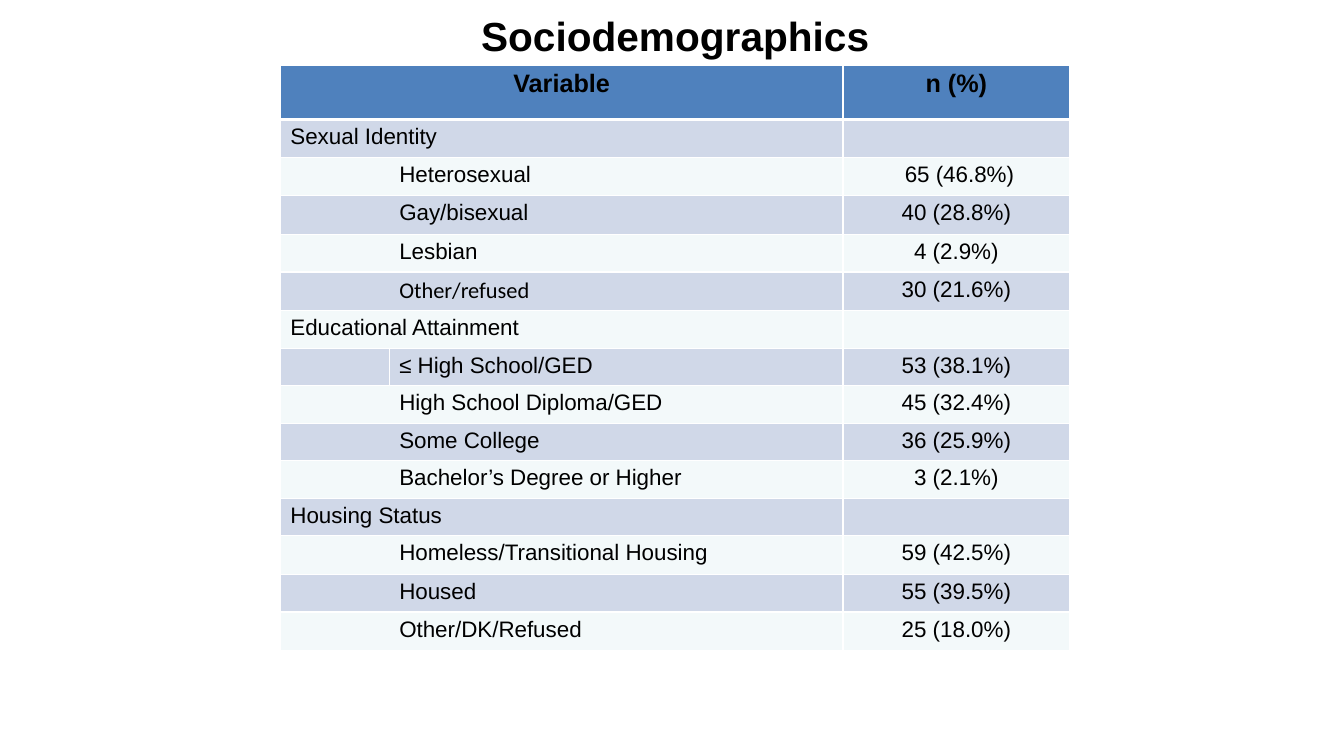
from dataclasses import dataclass

from pptx import Presentation
from pptx.dml.color import RGBColor
from pptx.enum.text import MSO_ANCHOR as Anchor, MSO_AUTO_SIZE as Fit, PP_ALIGN as Align
from pptx.oxml.xmlchemy import OxmlElement as Node
from pptx.table import Table, _Cell as Cell
from pptx.text.text import _Paragraph as Para
from pptx.util import Emu, Inches, Pt

WIDE, HIGH = Inches(13.33), Inches(7.5)
BLACK, WHITE, BLUE = "000000", "FFFFFF", "4F81BD"
BANDS = ("D0D8E8", "F3F9FA")
COLS = (8.1, 33.76, 16.88)


@dataclass
class Row:
    label: str
    value: str = ""
    high: float = 4.53
    font: str = "Arial"
    split: bool = False
    head: bool = False

    @property
    def group(self) -> bool:
        return self.head or not self.value


ROWS = (
    Row("Variable", "n (%)", 7.2, head=True),
    Row("Sexual Identity", high=5.07),
    Row("Heterosexual", " 65 (46.8%)"),
    Row("Gay/bisexual", "40 (28.8%)", 5.2),
    Row("Lesbian", "4 (2.9%)"),
    Row("Other/refused", "30 (21.6%)", 5.13, font="Calibri"),
    Row("Educational Attainment"),
    Row("≤ High School/GED", "53 (38.1%)", split=True),
    Row("High School Diploma/GED", "45 (32.4%)"),
    Row("Some College", "36 (25.9%)"),
    Row("Bachelor’s Degree or Higher", "3 (2.1%)", 4.93),
    Row("Housing Status"),
    Row("Homeless/Transitional Housing", "59 (42.5%)", 5.13),
    Row("Housed", "55 (39.5%)"),
    Row("Other/DK/Refused", "25 (18.0%)", 5.07),
)


def across(share: float) -> Emu:
    return Emu(round(WIDE * share / 100))


def down(share: float) -> Emu:
    return Emu(round(HIGH * share / 100))


def color(code: str) -> RGBColor:
    return RGBColor.from_string(code)


def write(para: Para, text: str, size: float, bold: bool, font: str = "Arial") -> None:
    run = para.add_run()
    run.text = text
    run.font.size = Pt(size)
    run.font.bold = bold
    run.font.name = font
    run.font.color.rgb = color(BLACK)


def edge(cell: Cell, side: str, width: float) -> None:
    line = Node(f"a:ln{side}")
    line.set("w", str(Pt(width)))
    if width:
        fill = Node("a:solidFill")
        tint = Node("a:srgbClr")
        tint.set("val", WHITE)
        fill.append(tint)
    else:
        fill = Node("a:noFill")
    line.append(fill)
    cell._tc.get_or_add_tcPr().append(line)


def paint(cell: Cell, row: Row, place: int, col: int) -> None:
    inner = 1 if row.split else 0
    widths = {
        "L": inner if col == 1 else 1,
        "R": inner if col == 0 else 1,
        "T": 3 if place == 1 else 1,
        "B": 3 if row.head else 1,
    }
    for side, width in widths.items():
        edge(cell, side, width)
    cell.fill.solid()
    cell.fill.fore_color.rgb = color(BLUE if row.head else BANDS[(place - 1) % 2])
    cell.margin_top = cell.margin_bottom = Inches(0.05)
    cell.vertical_anchor = Anchor.TOP


def fill_row(table: Table, place: int, row: Row) -> None:
    table.rows[place].height = down(row.high)
    texts = (row.label, "", row.value) if row.group else ("", row.label, row.value)
    for col, text in enumerate(texts):
        cell = table.cell(place, col)
        paint(cell, row, place, col)
        para = cell.text_frame.paragraphs[0]
        para.alignment = Align.CENTER if row.head or col == 2 else Align.LEFT
        if text:
            font = row.font if col < 2 else "Arial"
            write(para, text, 18 if row.head else 16, row.head, font)
        else:
            end = Node("a:endParaRPr")
            end.set("sz", "1600")
            para._p.append(end)
    if row.group:
        table.cell(place, 0).merge(table.cell(place, 1))


def main() -> None:
    deck = Presentation()
    deck.slide_width, deck.slide_height = WIDE, HIGH
    slide = deck.slides.add_slide(deck.slide_layouts[5])
    title = slide.shapes.title
    title.left, title.top = across(12.75), down(0.4)
    title.width, title.height = across(75), down(8.53)
    frame = title.text_frame
    frame.auto_size = Fit.NONE
    frame.word_wrap = True
    frame.vertical_anchor = Anchor.MIDDLE
    para = frame.paragraphs[0]
    para.alignment = Align.CENTER
    write(para, "Sociodemographics", 29, True)

    total = sum(row.high for row in ROWS)
    table = slide.shapes.add_table(
        len(ROWS), len(COLS), across(20.86), down(8.6), across(sum(COLS)), down(total)
    ).table
    for col, width in zip(table.columns, COLS):
        col.width = across(width)
    for place, row in enumerate(ROWS):
        fill_row(table, place, row)
    deck.save("out.pptx")


if __name__ == "__main__":
    main()
